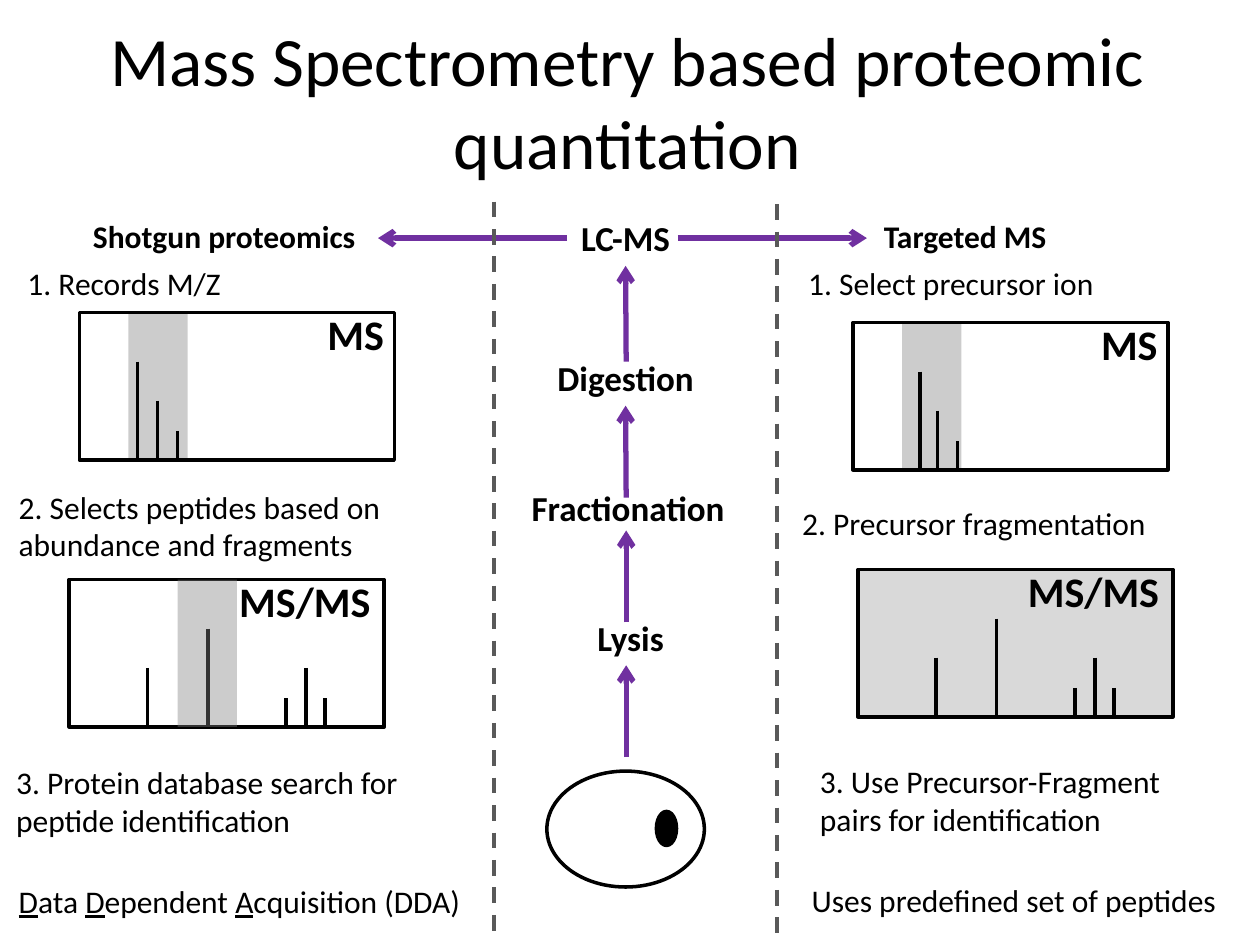
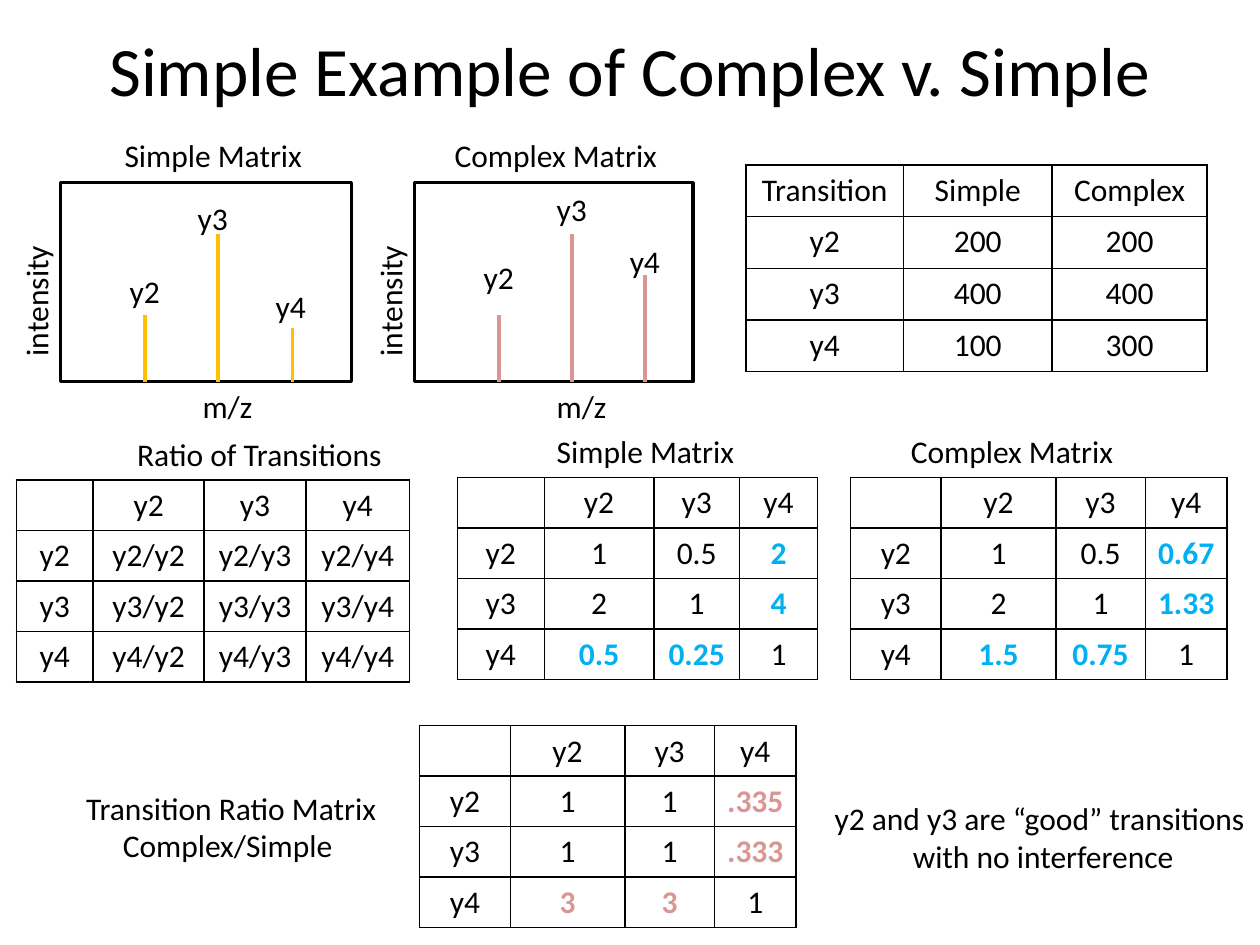
from dataclasses import dataclass
from typing import Optional

from lxml.etree import SubElement
from pptx import Presentation
from pptx.dml.color import RGBColor
from pptx.enum.dml import MSO_LINE
from pptx.enum.shapes import MSO_CONNECTOR, MSO_SHAPE
from pptx.enum.text import MSO_ANCHOR, MSO_AUTO_SIZE, PP_ALIGN
from pptx.oxml.ns import qn
from pptx.util import Inches, Pt

FONT = "Calibri"
COLORS = {
    "black": "000000", "white": "FFFFFF", "arrow": "7030A0", "divider": "595959",
    "gate": "808080", "fragment": "D9D9D9", "simple": "FFC000",
    "complex": "D99694", "ratio": "00B0F0",
}
IONS = ["y2", "y3", "y4"]
BOTTOM, LEFT = 2, 1


@dataclass
class Panel:
    """A framed spectrum; peaks are (offset from left, height)."""
    left: float
    top: float
    label: str
    label_offset: float
    peaks: list[tuple[float, float]]
    fill: Optional[str] = None
    gate: Optional[float] = None
    gate_in_front: bool = False


@dataclass
class MatrixPlot:
    """A plot of y2, y3 and y4; peaks are (peak x, peak top, label left, label top)."""
    title: str
    title_left: float
    title_width: float
    left: float
    width: float
    color: str
    peaks: list[tuple[float, float, float, float]]


@dataclass
class Grid:
    left: float
    top: float
    row_height: float
    columns: list[float]
    rows: list[list[str]]
    highlight: Optional[str] = None


def rgb(name: str) -> RGBColor:
    return RGBColor.from_string(COLORS[name])


def format_run(run, size: float, bold: bool, color: str) -> None:
    run.font.name, run.font.size, run.font.bold = FONT, Pt(size), bold
    run.font.color.rgb = rgb(color)


def add_text(slide, text: str, left: float, top: float, width: float, height: float = 0.4, *,
             size: float = 18, bold: bool = False, color: str = "black", center: bool = False,
             wrap: bool = False, grow: bool = True, middle: bool = False, rotation: float = 0):
    """Place text; parts between underscores are underlined."""
    shape = slide.shapes.add_textbox(Inches(left), Inches(top), Inches(width), Inches(height))
    shape.rotation = rotation
    frame = shape.text_frame
    frame.word_wrap = wrap
    frame.auto_size = MSO_AUTO_SIZE.SHAPE_TO_FIT_TEXT if grow else MSO_AUTO_SIZE.NONE
    frame.vertical_anchor = MSO_ANCHOR.MIDDLE if middle else MSO_ANCHOR.TOP
    for number, line in enumerate(text.split("\n")):
        paragraph = frame.add_paragraph() if number else frame.paragraphs[0]
        paragraph.alignment = PP_ALIGN.CENTER if center else PP_ALIGN.LEFT
        for index, part in enumerate(line.split("_")):
            if part:
                run = paragraph.add_run()
                run.text = part
                format_run(run, size, bold, color)
                if index % 2:
                    run.font.underline = True
    return shape


def add_title(slide, text: str, left: float, top: float) -> None:
    add_text(slide, text, left, top, 9, 1.25, size=39.6, center=True, wrap=True,
             grow=False, middle=True)


def add_box(slide, left: float, top: float, width: float, height: float, *,
            kind=MSO_SHAPE.RECTANGLE, fill: Optional[str] = None,
            line: Optional[str] = "black", opacity: int = 100):
    shape = slide.shapes.add_shape(kind, Inches(left), Inches(top), Inches(width), Inches(height))
    shape.shadow.inherit = False
    if fill:
        shape.fill.solid()
        shape.fill.fore_color.rgb = rgb(fill)
        if opacity < 100:
            color = shape.element.spPr.find(qn("a:solidFill"))[0]
            SubElement(color, qn("a:alpha"), val=str(opacity * 1000))
    else:
        shape.fill.background()
    if line:
        shape.line.color.rgb = rgb(line)
        shape.line.width = Pt(2)
    else:
        shape.line.fill.background()
    return shape


def add_line(slide, start: tuple[float, float], end: tuple[float, float], *,
             color: str = "black", width: float = 2, dashed: bool = False, arrow: bool = False):
    connector = slide.shapes.add_connector(
        MSO_CONNECTOR.STRAIGHT, *(Inches(value) for value in start + end))
    connector.line.color.rgb = rgb(color)
    connector.line.width = Pt(width)
    if dashed:
        connector.line.dash_style = MSO_LINE.DASH
    properties = connector.element.spPr
    if arrow:
        SubElement(properties.find(qn("a:ln")), qn("a:tailEnd"), type="arrow")
    SubElement(properties, qn("a:effectLst"))
    return connector


def add_panel(slide, panel: Panel) -> None:
    width, height = 2.5, 1.17

    def add_gate() -> None:
        add_box(slide, panel.left + panel.gate, panel.top, 0.47, height,
                fill="gate", line=None, opacity=40)

    if panel.gate is not None and not panel.gate_in_front:
        add_gate()
    add_box(slide, panel.left, panel.top, width, height, fill=panel.fill)
    bottom = panel.top + height
    for offset, peak_height in panel.peaks:
        x = panel.left + offset
        add_line(slide, (x, bottom - peak_height), (x, bottom))
    add_text(slide, panel.label, panel.left + panel.label_offset, panel.top - 0.08,
             width - panel.label_offset + 0.07, 0.51, size=24, bold=True)
    if panel.gate is not None and panel.gate_in_front:
        add_gate()


def add_matrix_plot(slide, plot: MatrixPlot) -> None:
    top, height = 1.45, 1.58
    add_box(slide, plot.left, top, plot.width, height)
    add_text(slide, plot.title, plot.title_left, 1.03, plot.title_width)
    for ion, (x, peak_top, label_left, label_top) in zip(IONS, plot.peaks):
        add_line(slide, (x, peak_top), (x, top + height), color=plot.color)
        add_text(slide, ion, label_left, label_top, 0.44)
    add_text(slide, "m/z", plot.left + 1.03, 3.02, 0.6)
    add_text(slide, "intensity", plot.left - 0.74, 2.18, 1.09, rotation=270)


def style_cell(cell) -> None:
    """Give a cell black one-point borders and no fill."""
    properties = cell._tc.get_or_add_tcPr()
    for side in ("a:lnL", "a:lnR", "a:lnT", "a:lnB"):
        border = SubElement(properties, qn(side), w=str(Pt(1)))
        fill = SubElement(border, qn("a:solidFill"))
        SubElement(fill, qn("a:srgbClr"), val=COLORS["black"])
    cell.fill.background()


def add_grid(slide, grid: Grid) -> None:
    row_count, column_count = len(grid.rows), len(grid.columns)
    table = slide.shapes.add_table(
        row_count, column_count, Inches(grid.left), Inches(grid.top),
        Inches(sum(grid.columns)), Inches(grid.row_height * row_count)).table
    table.first_row = table.horz_banding = False
    for column, width in zip(table.columns, grid.columns):
        column.width = Inches(width)
    for row_index, values in enumerate(grid.rows):
        table.rows[row_index].height = Inches(grid.row_height)
        for column_index, value in enumerate(values):
            cell = table.cell(row_index, column_index)
            style_cell(cell)
            if not value:
                continue
            # Ratios that involve y4 and another ion stand out
            involves_y4 = (row_index == 3) != (column_index == 3)
            marked = bool(grid.highlight and involves_y4 and row_index and column_index)
            paragraph = cell.text_frame.paragraphs[0]
            paragraph.alignment = PP_ALIGN.CENTER
            run = paragraph.add_run()
            run.text = value
            format_run(run, 18, marked, grid.highlight if marked else "black")


def ion_matrix(*rows: str) -> list[list[str]]:
    """Add ion headers to rows of space-separated values."""
    return [["", *IONS]] + [[ion, *row.split()] for ion, row in zip(IONS, rows)]


def build_workflow(slide) -> None:
    add_title(slide, "Mass Spectrometry based proteomic quantitation", 0.48, 0.17)

    # Sample preparation steps
    steps = {
        name: add_text(slide, name, left, top, width, 0.44, size=20, bold=True, center=True)
        for name, left, top, width in [
            ("Fractionation", 4.11, 3.81, 1.75), ("Digestion", 4.32, 2.78, 1.29),
            ("LC-MS", 4.5, 1.67, 0.93), ("Lysis", 4.64, 4.84, 0.73)]
    }

    # Cell with nucleus
    add_box(slide, 5.21, 6.44, 0.16, 0.27, kind=MSO_SHAPE.OVAL, fill="black")
    add_box(slide, 4.34, 6.12, 1.25, 0.92, kind=MSO_SHAPE.OVAL)

    # Arrows upwards and out to both methods
    arrow = {"color": "arrow", "width": 3, "arrow": True}
    for start, end in [(6.01, 5.28), (4.94, 4.21)]:
        add_line(slide, (4.97, start), (4.97, end), **arrow)
    for start, end, step in [(3.95, 3.21, "Digestion"), (2.87, 2.14, "LC-MS")]:
        add_line(slide, (4.97, start), (4.97, end), **arrow).end_connect(steps[step], BOTTOM)
    add_line(slide, (5.38, 1.89), (6.88, 1.89), **arrow)
    add_line(slide, (4.5, 1.89), (3, 1.89), **arrow).begin_connect(steps["LC-MS"], LEFT)

    # Column dividers
    for x, top in [(3.92, 1.6), (6.17, 1.62)]:
        add_line(slide, (x, top), (x, top + 5.83), color="divider", width=2.25, dashed=True)

    # Spectra
    fragments = [(1.1, 0.78), (0.62, 0.47), (1.72, 0.23), (1.88, 0.47), (2.03, 0.23)]
    for panel in [
        Panel(0.63, 2.48, "MS", 1.87, [(0.46, 0.78), (0.62, 0.47), (0.78, 0.23)], gate=0.39),
        Panel(6.77, 2.56, "MS", 1.87, [(0.53, 0.78), (0.67, 0.47), (0.83, 0.23)], gate=0.39),
        Panel(0.55, 4.6, "MS/MS", 1.25, fragments, "white", 0.86, True),
        Panel(6.81, 4.52, "MS/MS", 1.25, fragments, "fragment"),
    ]:
        add_panel(slide, panel)

    # Method names and their steps
    for text, left, width in [("Shotgun proteomics", 0.63, 2.3), ("Targeted MS", 6.91, 1.5)]:
        add_text(slide, text, left, 1.67, width, bold=True, center=True)
    for text, left, top, width in [
        ("1. Records M/Z", 0.09, 2.05, 1.79),
        ("1. Select precursor ion ", 6.3, 2.05, 2.55),
        ("2. Precursor fragmentation", 6.25, 3.95, 2.96),
        ("Uses predefined set of peptides ", 6.32, 6.94, 3.51),
    ]:
        add_text(slide, text, left, top, width, center=True)
    for text, left, top, width, height in [
        ("2. Selects peptides based on abundance and fragments", 0.05, 3.82, 3.36, 0.71),
        ("3. Protein database search for peptide identification", 0.03, 6.01, 3.7, 0.71),
        ("_D_ata _D_ependent _A_cquisition (DDA)", 0.05, 6.95, 3.99, 0.4),
        ("3. Use Precursor-Fragment pairs for identification", 6.41, 6, 3.43, 0.71),
    ]:
        add_text(slide, text, left, top, width, height, wrap=True)


def build_example(slide) -> None:
    add_title(slide, "Simple Example of Complex v. Simple", 0.5, -0.08)

    # Spectra of both matrices
    for plot in [
        MatrixPlot("Simple Matrix", 0.89, 1.68, 0.48, 2.31, "simple", [
            (1.15, 2.5, 0.93, 2.11), (1.73, 1.86, 1.47, 1.53), (2.32, 2.6, 2.09, 2.23)]),
        MatrixPlot("Complex Matrix", 3.51, 1.88, 3.29, 2.21, "complex", [
            (3.96, 2.5, 3.74, 2), (4.54, 1.86, 4.32, 1.46), (5.12, 2.18, 4.9, 1.87)]),
    ]:
        add_matrix_plot(slide, plot)

    # Intensities and ratio tables
    ratios = [" ".join(f"{row}/{column}" for column in IONS) for row in IONS]
    wide_columns = [0.72, 0.91, 0.71, 0.65]
    for grid in [
        Grid(5.92, 1.31, 0.41, [1.25, 1.18, 1.23], [
            ["Transition", "Simple", "Complex"], ["y2", "200", "200"],
            ["y3", "400", "400"], ["y4", "100", "300"]]),
        Grid(6.75, 3.79, 0.4, wide_columns,
             ion_matrix("1 0.5 0.67", "2 1 1.33", "1.5 0.75 1"), "ratio"),
        Grid(3.63, 3.79, 0.4, [0.69, 0.87, 0.68, 0.62],
             ion_matrix("1 0.5 2", "2 1 4", "0.5 0.25 1"), "ratio"),
        Grid(0.13, 3.81, 0.4, [0.61, 0.88, 0.81, 0.82], ion_matrix(*ratios)),
        Grid(3.33, 5.76, 0.4, wide_columns,
             ion_matrix("1 1 .335", "1 1 .333", "3 3 1"), "complex"),
    ]:
        add_grid(slide, grid)

    # Table captions and conclusion
    for text, left, top, width in [
        ("Ratio of Transitions", 0.99, 3.4, 2.17),
        ("Simple Matrix", 4.32, 3.38, 1.68),
        ("Complex Matrix", 7.13, 3.38, 1.88),
    ]:
        add_text(slide, text, left, top, width)
    for text, left, top, width in [
        ("y2 and y3 are “good” transitions \nwith no interference", 6.5, 6.29, 3.56),
        ("Transition Ratio Matrix\nComplex/Simple ", 0.57, 6.21, 2.53),
    ]:
        add_text(slide, text, left, top, width, 0.71, center=True)


def main() -> None:
    presentation = Presentation()
    presentation.slide_width, presentation.slide_height = Inches(10), Inches(7.5)
    for build in (build_workflow, build_example):
        build(presentation.slides.add_slide(presentation.slide_layouts[6]))
    presentation.save("out.pptx")


if __name__ == "__main__":
    main()
